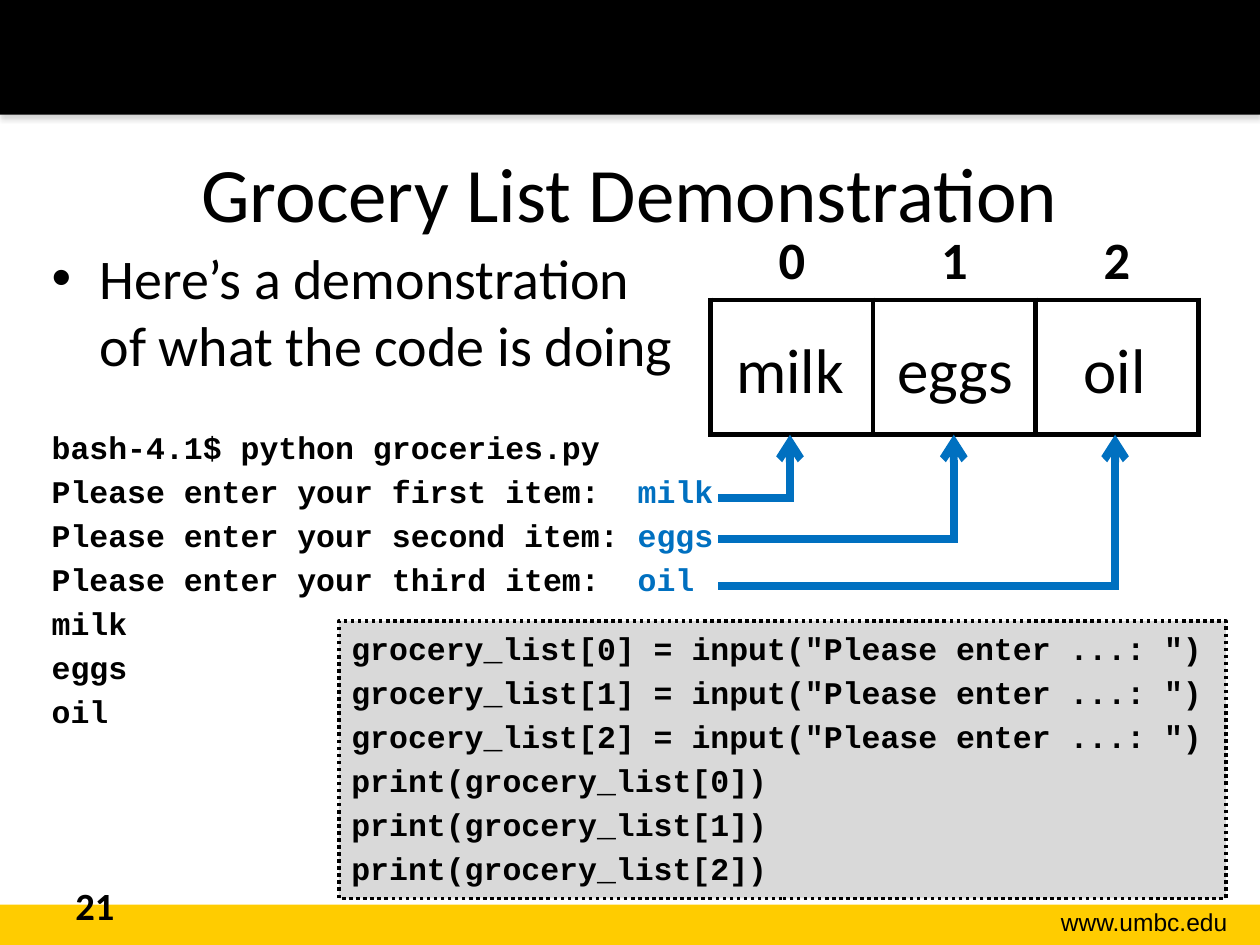
import pptx
import pptx.util
import pptx.dml.color
import pptx.enum.dml
import pptx.enum.shapes
import pptx.enum.text
import pptx.oxml
from pptx.util import Inches, Pt

NS = 'xmlns:a="http://schemas.openxmlformats.org/drawingml/2006/main"'
BLACK, BLUE, GOLD, GREY, WHITE = "000000", "0070C0", "FFCC00", "D9D9D9", "FFFFFF"
ALIGN = pptx.enum.text.PP_ALIGN
ANCHOR = pptx.enum.text.MSO_ANCHOR
RECTANGLE = pptx.enum.shapes.MSO_SHAPE.RECTANGLE
CODE_GAP = Pt(3.6)


def rgb(value):
    return pptx.dml.color.RGBColor.from_string(value)


def style(paragraph, size, face="Calibri", bold=False, align=ALIGN.LEFT):
    paragraph.alignment = align
    for run in paragraph.runs:
        run.font.size = Pt(size)
        run.font.name = face
        run.font.bold = bold
        run.font.color.rgb = rgb(BLACK)


prs = pptx.Presentation()
prs.slide_width, prs.slide_height = Inches(10), Inches(7.5)
slide = prs.slides.add_slide(prs.slide_layouts[1])
shapes = slide.shapes

# Gold footer band and black header band
for top, height, color in [(7.18, 0.32, GOLD), (0, 0.91, BLACK)]:
    band = shapes.add_shape(RECTANGLE, 0, Inches(top), Inches(10), Inches(height))
    band.shadow.inherit = False
    band.fill.solid()
    band.fill.fore_color.rgb = rgb(color)
    band.line.fill.background()
# The header band, drawn last, casts a soft shadow downwards
band.shadow.inherit = True
band._element.spPr.append(pptx.oxml.parse_xml(
    f'<a:effectLst {NS}><a:outerShdw blurRad="{Pt(3.1)}" dist="{Pt(1.8)}" dir="5400000">'
    '<a:srgbClr val="808080"><a:alpha val="35000"/></a:srgbClr></a:outerShdw></a:effectLst>'))

# Title
title = shapes.title
title.left, title.top, title.width, title.height = map(Inches, (0.5, 0.9, 9, 1.25))
title.text_frame.text = "Grocery List Demonstration"
title.text_frame.vertical_anchor = ANCHOR.MIDDLE
style(title.text_frame.paragraphs[0], 44, align=ALIGN.CENTER)

# Bullet followed by the console session
body = slide.placeholders[1]
body.left, body.top, body.width, body.height = map(Inches, (0.31, 1.88, 9.58, 4.55))
body.text_frame.auto_size = pptx.enum.text.MSO_AUTO_SIZE.NONE
body.text_frame.text = "Here’s a demonstration\vof what the code is doing"
intro = body.text_frame.paragraphs[0]
intro_props = intro._p.get_or_add_pPr()
intro_props.set("marL", str(Inches(0.38)))
intro_props.set("indent", str(-Inches(0.38)))
intro_props.append(pptx.oxml.parse_xml(f'<a:buFont {NS} typeface="Arial"/>'))
intro_props.append(pptx.oxml.parse_xml(f'<a:buChar {NS} char="•"/>'))
intro.space_before = Pt(0)
style(intro, 32)

session = [
    ("bash-4.1$ python groceries.py", ""),
    ("Please enter your first item:  ", "milk"),
    ("Please enter your second item: ", "eggs"),
    ("Please enter your third item:  ", "oil"),
    ("milk", ""),
    ("eggs", ""),
    ("oil", ""),
]
for number, (output, answer) in enumerate(session):
    line = body.text_frame.add_paragraph()
    line_props = line._p.get_or_add_pPr()
    line_props.set("marL", "0")
    line_props.set("indent", "0")
    line_props.append(pptx.oxml.parse_xml(f"<a:buNone {NS}/>"))
    line.space_before = CODE_GAP if number else Pt(28.7)
    line.text = output
    if answer:
        line.add_run().text = answer
    style(line, 18, "Courier New", True)
    if answer:
        line.runs[1].font.color.rgb = rgb(BLUE)

# List diagram: indexes above three boxes
grid = shapes.add_table(2, 3, Inches(5.64), Inches(1.63), Inches(3.87), Inches(1.82)).table
grid.first_row = grid.horz_banding = False
grid.rows[0].height, grid.rows[1].height = Inches(0.75), Inches(1.07)
for index in range(3):
    grid.columns[index].width = Inches(1.29)
    label, box = grid.cell(0, index), grid.cell(1, index)
    label.text_frame.text = str(index)
    label.vertical_anchor = ANCHOR.BOTTOM
    style(label.text_frame.paragraphs[0], 30, bold=True, align=ALIGN.CENTER)
    for cell, drawn_sides in [(label, "B"), (box, "LRTB")]:
        cell_props = cell._tc.get_or_add_tcPr()
        for side in "LRTB":
            paint = (f'<a:solidFill><a:srgbClr val="{BLACK}"/></a:solidFill>'
                     if side in drawn_sides else "<a:noFill/>")
            cell_props.append(pptx.oxml.parse_xml(
                f'<a:ln{side} {NS} w="{Pt(3)}">{paint}</a:ln{side}>'))
    label.fill.background()
    box.fill.solid()
    box.fill.fore_color.rgb = rgb(WHITE)

# Free-standing texts: stored items, page number and site address
texts = [
    ("milk", 5.64, 2.57, 1.26, 0.71, 36, "Calibri", False, ALIGN.CENTER),
    ("eggs", 6.95, 2.57, 1.26, 0.71, 36, "Calibri", False, ALIGN.CENTER),
    ("oil", 8.34, 2.57, 1.01, 0.71, 36, "Calibri", False, ALIGN.CENTER),
    ("21", 0.5, 6.95, 2.33, 0.4, 22, "Calibri", True, ALIGN.LEFT),
    ("www.umbc.edu", 7.85, 7.15, 1.99, 0.34, 14, "Arial", False, ALIGN.RIGHT),
]
for words, left, top, width, height, size, face, bold, align in texts:
    text_box = shapes.add_textbox(Inches(left), Inches(top), Inches(width), Inches(height))
    text_box.text_frame.word_wrap = True
    text_box.text_frame.text = words
    style(text_box.text_frame.paragraphs[0], size, face, bold, align)

# Blue arrows from each answer up to its box
for column_x, answer_y in [(6.27, 3.95), (7.57, 4.28), (8.85, 4.65)]:
    arrow = shapes.add_group_shape()
    segments = [(column_x, answer_y, column_x, 3.45),
                (5.7, answer_y, column_x + 0.03, answer_y)]
    for segment in segments:
        stroke = arrow.shapes.add_connector(
            pptx.enum.shapes.MSO_CONNECTOR.STRAIGHT, *map(Inches, segment))
        stroke.line.color.rgb = rgb(BLUE)
        stroke.line.width = Pt(4.5)
        if segment == segments[0]:
            stroke.line._get_or_add_ln().append(
                pptx.oxml.parse_xml(f'<a:tailEnd {NS} type="arrow"/>'))
        stroke._element.spPr.append(pptx.oxml.parse_xml(f"<a:effectLst {NS}/>"))

# Program listing
listing = shapes.add_shape(RECTANGLE, Inches(2.69), Inches(4.93), Inches(7.04), Inches(2.2))
listing.shadow.inherit = False
listing.fill.solid()
listing.fill.fore_color.rgb = rgb(GREY)
listing.line.color.rgb = rgb(BLACK)
listing.line.width = Pt(2)
listing.line.dash_style = pptx.enum.dml.MSO_LINE.ROUND_DOT
listing.text_frame.vertical_anchor = ANCHOR.TOP
listing.text_frame.margin_top = Inches(0.06)
listing.text_frame.text = "\n".join(
    [f'grocery_list[{index}] = input("Please enter ...: ")' for index in range(3)]
    + [f"print(grocery_list[{index}])" for index in range(3)])
for number, line in enumerate(listing.text_frame.paragraphs):
    line.space_before = CODE_GAP if number else Pt(0)
    style(line, 18, "Courier New", True)

prs.save("out.pptx")
